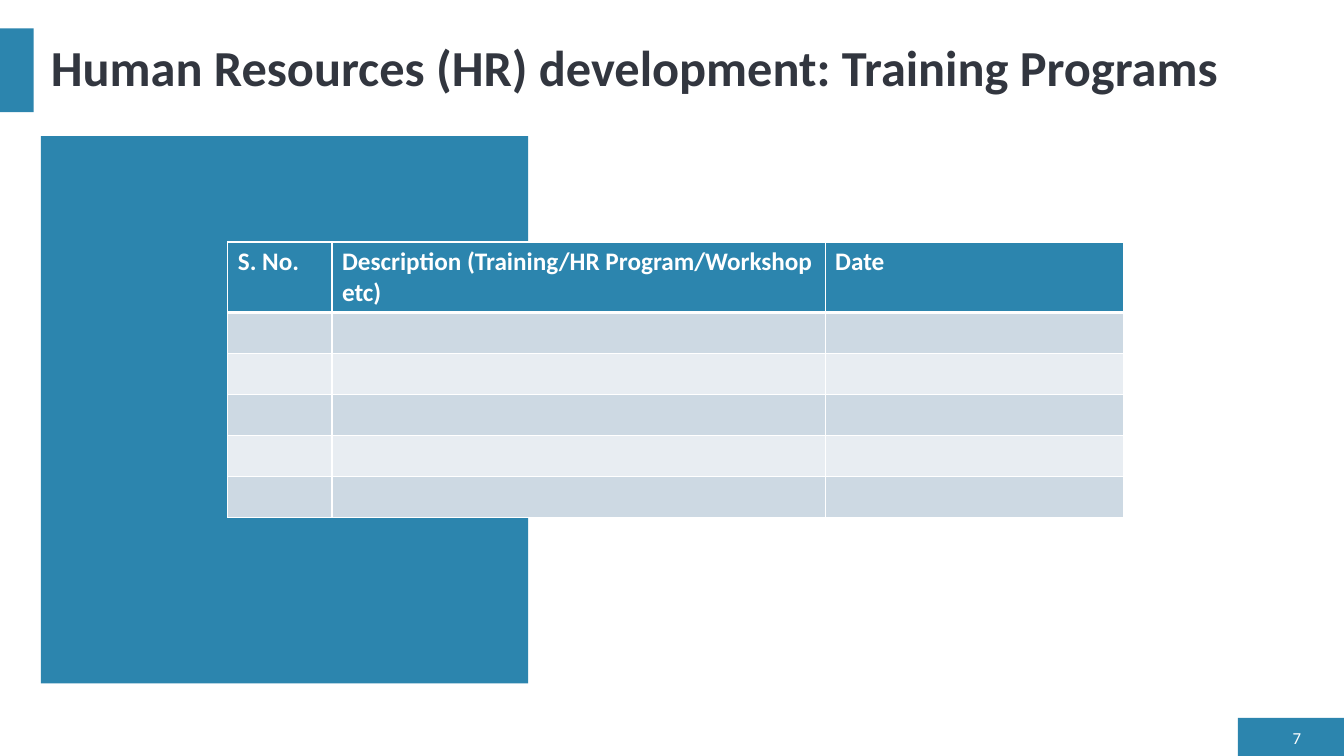
"""Build the training programs slide with its empty schedule table."""
from dataclasses import dataclass

from lxml.etree import SubElement
from pptx import Presentation
from pptx.dml.color import RGBColor
from pptx.enum.shapes import MSO_SHAPE as Shape
from pptx.enum.text import MSO_ANCHOR as Anchor, PP_ALIGN as Align
from pptx.oxml.ns import qn
from pptx.slide import Slide
from pptx.table import _Cell as Cell
from pptx.text.text import _Paragraph as Paragraph
from pptx.util import Inches, Pt

COLORS = {"blue": "2C85AE", "ink": "32363F", "white": "FFFFFF",
          "band_dark": "CDD9E3", "band_light": "E8EDF2"}
WIDTH, HEIGHT = Inches(13.333), Inches(7.5)
TABLE_LEFT, TABLE_TOP = 16.95, 32
COLUMNS = {"S. No.": 7.75, "Description (Training/HR Program/Workshop etc)": 36.7,
           "Date": 22.2}
HEADER_ROW, BODY_ROW, BODY_COUNT = 9.35, 5.42, 5


@dataclass(frozen=True)
class Box:
    """Rectangle in percent of the slide's width and height."""
    left: float
    top: float
    width: float
    height: float

    def place(self) -> tuple[int, int, int, int]:
        """Return the rectangle in slide units."""
        return across(self.left), down(self.top), across(self.width), down(self.height)


@dataclass(frozen=True)
class Label:
    """Line of text with its place and format."""
    text: str
    box: Box
    font: dict
    paragraph: dict


PANELS = [Box(92.1, 94.95, 7.9, 5.05), Box(0, 3.75, 2.5, 11.1),
          Box(3.05, 18, 36.25, 72.4)]
LABELS = [
    Label("Human Resources (HR) development: Training Programs",
          Box(3.05, 3.75, 94.5, 11.1),
          {"size": Pt(36), "bold": True, "color": "ink"}, {"line_spacing": 0.9}),
    Label("7", Box(94.5, 96, 3.05, 3.1),
          {"size": Pt(12), "bold": False, "color": "white"},
          {"alignment": Align.RIGHT}),
]
HEADER_FONT = {"size": Pt(18), "bold": True, "color": "white"}


def across(percent: float) -> int:
    """Turn a share of the slide's width into a length."""
    return round(WIDTH * percent / 100)


def down(percent: float) -> int:
    """Turn a share of the slide's height into a length."""
    return round(HEIGHT * percent / 100)


def color(name: str) -> RGBColor:
    """Look up a named colour."""
    return RGBColor.from_string(COLORS[name])


def write(paragraph: Paragraph, text: str, font: dict) -> None:
    """Add one formatted run."""
    run = paragraph.add_run()
    run.text = text
    run.font.name = "Calibri"
    for name, value in font.items():
        if name == "color":
            run.font.color.rgb = color(value)
        else:
            setattr(run.font, name, value)


def draw_panel(slide: Slide, box: Box) -> None:
    """Draw a plain blue rectangle."""
    shape = slide.shapes.add_shape(Shape.RECTANGLE, *box.place())
    shape.shadow.inherit = False
    shape.fill.solid()
    shape.fill.fore_color.rgb = color("blue")
    shape.line.fill.background()


def draw_label(slide: Slide, label: Label) -> None:
    """Draw a vertically centred line of text."""
    frame = slide.shapes.add_textbox(*label.box.place()).text_frame
    frame.word_wrap = True
    frame.vertical_anchor = Anchor.MIDDLE
    paragraph = frame.paragraphs[0]
    for name, value in label.paragraph.items():
        setattr(paragraph, name, value)
    write(paragraph, label.text, label.font)


def style_cell(cell: Cell, fill: str, top: float, bottom: float) -> None:
    """Give a cell white borders and a fill."""
    properties = cell._tc.get_or_add_tcPr()
    for side, points in {"L": 1, "R": 1, "T": top, "B": bottom}.items():
        line = SubElement(properties, qn(f"a:ln{side}"), w=str(Pt(points)))
        solid = SubElement(line, qn("a:solidFill"))
        SubElement(solid, qn("a:srgbClr"), val=COLORS["white"])
    cell.fill.solid()
    cell.fill.fore_color.rgb = color(fill)


def draw_table(slide: Slide) -> None:
    """Draw the header row and the banded empty rows."""
    heights = [HEADER_ROW] + [BODY_ROW] * BODY_COUNT
    box = Box(TABLE_LEFT, TABLE_TOP, sum(COLUMNS.values()), sum(heights))
    table = slide.shapes.add_table(len(heights), len(COLUMNS), *box.place()).table
    for column, width in zip(table.columns, COLUMNS.values()):
        column.width = across(width)
    for index, (row, height) in enumerate(zip(table.rows, heights)):
        row.height = down(height)
        band = "band_dark" if index % 2 else "band_light"
        for cell, heading in zip(row.cells, COLUMNS):
            style_cell(cell, band if index else "blue",
                       top=3 if index == 1 else 1, bottom=1 if index else 3)
            if index == 0:
                write(cell.text_frame.paragraphs[0], heading, HEADER_FONT)


def main() -> None:
    """Build and save the presentation."""
    presentation = Presentation()
    presentation.slide_width, presentation.slide_height = WIDTH, HEIGHT
    slide = presentation.slides.add_slide(presentation.slide_layouts[6])
    for panel in PANELS:
        draw_panel(slide, panel)
    for label in LABELS:
        draw_label(slide, label)
    draw_table(slide)
    presentation.save("out.pptx")


if __name__ == "__main__":
    main()
